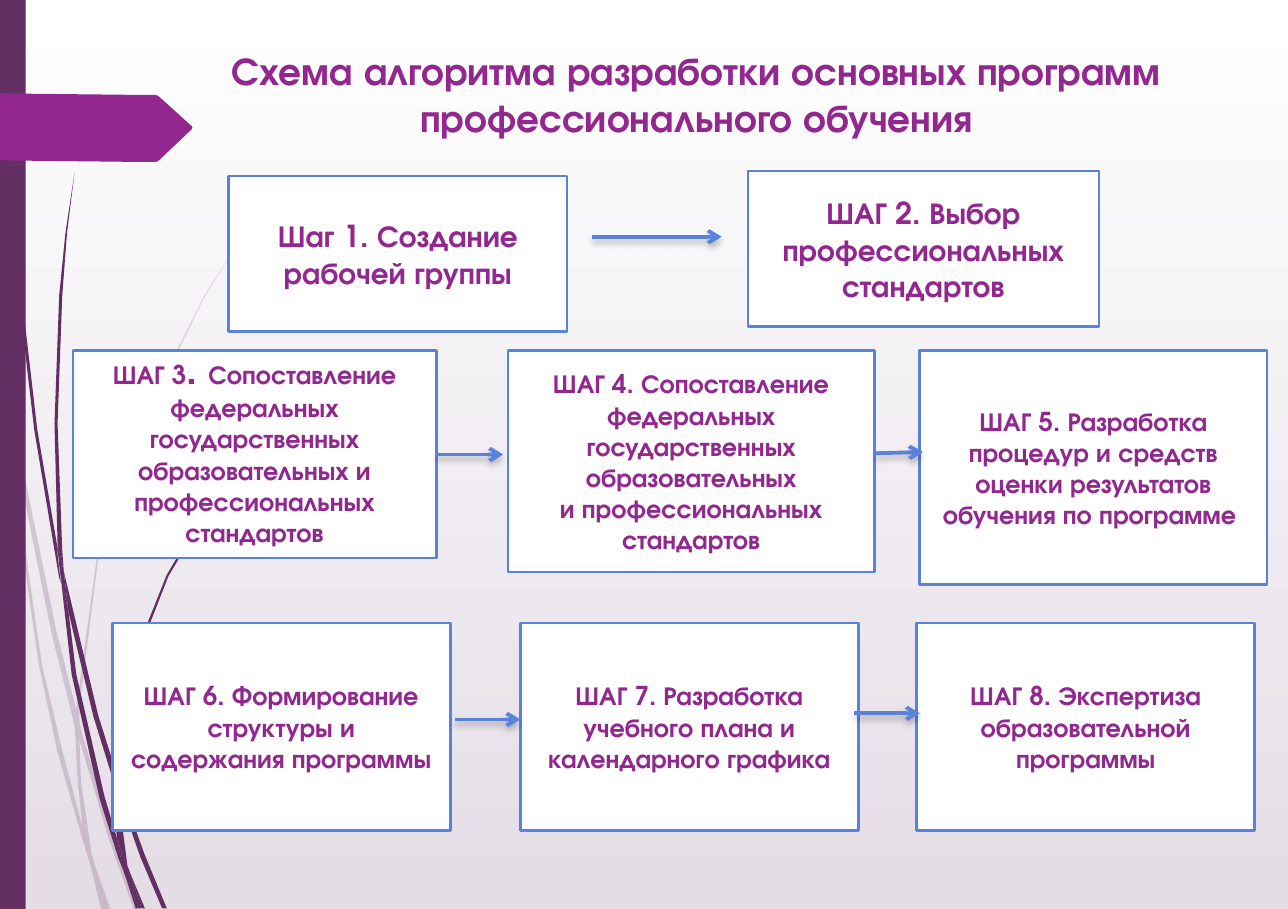
from dataclasses import dataclass

from lxml.etree import SubElement
from pptx import Presentation
from pptx.dml.color import RGBColor
from pptx.enum.shapes import MSO_CONNECTOR, MSO_SHAPE
from pptx.enum.text import MSO_ANCHOR, MSO_AUTO_SIZE, PP_ALIGN
from pptx.oxml.ns import qn
from pptx.util import Cm, Pt


@dataclass(frozen=True)
class Theme:
    font: str = "TeX Gyre Adventor"
    accent: str = "92278F"
    dark: str = "632E62"
    outline: str = "5982DB"
    white: str = "FFFFFF"
    bg_end: str = "E4DDE6"
    title: int = 18
    large: int = 14
    body: int = 12


T = Theme()

# Content: each step is a list of paragraphs, each paragraph a list of (text, size)
TITLE = "Схема алгоритма разработки основных программ профессионального обучения"
STEPS = [
    [[("Шаг 1. Создание рабочей группы", T.large)]],
    [[("ШАГ 2. Выбор профессиональных стандартов", T.large)]],
    [[("ШАГ 3", T.body), (". ", T.title),
      ("Сопоставление федеральных государственных образовательных и "
       "профессиональных стандартов", T.body)]],
    [[("ШАГ 4. Сопоставление федеральных государственных образовательных", T.body)],
     [("и профессиональных стандартов", T.body)]],
    [[("ШАГ 5. Разработка процедур и средств оценки результатов обучения по программе ", T.body)]],
    [[("ШАГ 6. Формирование структуры и содержания программы", T.body)]],
    [[("ШАГ 7. Разработка учебного плана и календарного графика", T.body)]],
    [[("ШАГ 8. Экспертиза образовательной программы", T.body)]],
]

# Step boxes in cm: left, top, width, height
BOXES = [
    (3.73, 2.87, 5.51, 2.54), (12.19, 2.79, 5.72, 2.54),
    (1.19, 5.72, 5.92, 3.38), (8.28, 5.72, 5.97, 3.61), (14.99, 5.72, 5.66, 3.81),
    (1.83, 10.16, 5.51, 3.38), (8.48, 10.16, 5.51, 3.38), (14.94, 10.16, 5.51, 3.38),
]
# Arrows in cm: x1, y1, x2, y2, index of the box joined at the start
ARROWS = [
    (9.65, 3.86, 11.76, 3.86, None), (7.11, 7.41, 8.2, 7.41, 2),
    (14.25, 7.39, 15.04, 7.37, None), (7.42, 11.73, 8.48, 11.73, None),
    (13.92, 11.63, 14.99, 11.63, None),
]

# Decorative strands, in grid units: outline points of every piece
UNIT = Cm(0.0254)
PALE_STRANDS = [
    [(6, 272), (5, 250), (0, 219), (0, 233), (6, 268)],
    [(33, 406), (48, 466), (49, 456), (36, 404), (8, 268), (10, 292)],
    [(53, 472), (51, 463), (51, 475), (70, 539), (86, 584), (89, 584), (73, 538)],
    [(68, 584), (71, 584), (60, 553)],
    [(53, 531), (40, 482), (27, 427), (18, 365), (10, 292), (6, 272), (16, 365),
     (25, 427), (37, 483), (53, 539), (58, 555), (57, 550)],
    [(5, 246), (5, 250), (8, 267), (8, 268), (6, 245), (3, 125), (6, 19), (5, 19), (2, 125)],
    [(48, 466), (50, 503), (53, 531), (55, 538), (60, 553), (59, 549), (52, 502),
     (51, 475), (50, 473)],
    [(51, 454), (63, 359), (92, 271), (131, 191), (154, 154), (166, 136), (179, 119),
     (166, 136), (154, 154), (131, 190), (91, 270), (62, 359), (49, 454), (49, 456), (51, 463)],
    [(58, 555), (65, 584), (68, 584)],
    [(50, 473), (51, 475), (51, 463), (49, 456), (48, 466)],
    [(55, 538), (53, 531), (57, 550), (58, 555), (68, 584), (60, 553)],
]
DARK_STRANDS = [
    [(4, 86), (11, 181), (22, 276), (38, 371), (39, 374), (37, 356), (37, 352), (24, 276),
     (13, 181), (5, 85), (3, 37), (2, 0), (2, 37)],
    [(60, 460), (73, 502), (73, 493), (73, 491), (63, 459), (41, 367), (44, 393)],
    [(77, 505), (75, 499), (76, 510), (90, 550), (104, 583), (107, 583), (93, 549)],
    [(75, 538), (67, 511), (49, 433), (44, 393), (39, 371), (46, 433), (64, 513),
     (76, 551), (80, 561), (79, 558)],
    [(41, 367), (40, 353), (37, 272), (40, 190), (43, 150), (48, 110), (42, 150),
     (38, 190), (35, 272), (37, 349)],
    [(91, 583), (93, 583), (83, 559)],
    [(39, 371), (44, 393), (41, 367), (37, 349), (37, 353)],
    [(76, 493), (85, 429), (108, 370), (140, 316), (158, 291), (168, 279), (178, 268),
     (168, 279), (158, 290), (139, 315), (107, 369), (83, 429), (73, 491), (75, 499)],
    [(80, 561), (87, 583), (89, 583)],
    [(73, 502), (75, 538), (79, 549), (83, 559), (82, 557), (76, 511), (74, 506)],
    [(73, 502), (74, 506), (76, 510), (75, 499), (73, 491), (73, 493)],
    [(79, 549), (75, 538), (79, 558), (80, 561), (89, 583), (91, 583), (83, 559)],
]
RIBBON = [(123, 83), (102, 103), (100, 104), (92, 104), (0, 103), (0, 60), (92, 61),
          (100, 61), (102, 62), (123, 81), (123.5, 82)]


def rgb(color):
    return RGBColor.from_string(color)


def paint(sp, fill, line=None):
    sp.shadow.inherit = False
    sp.fill.solid()
    sp.fill.fore_color.rgb = rgb(fill)
    if line:
        sp.line.color.rgb = rgb(line)
        sp.line.width = Pt(1.25)
    else:
        sp.line.fill.background()


def add_outline(shapes, points, color, alpha=None):
    pts = [(x * UNIT, y * UNIT) for x, y in points]
    fb = shapes.build_freeform(*pts[0])
    fb.add_line_segments(pts[1:], close=True)
    sp = fb.convert_to_shape()
    paint(sp, color)
    if alpha:
        clr = sp.fill._xPr.find(qn("a:solidFill"))[0]
        SubElement(clr, qn("a:alpha"), val=str(alpha * 1000))


def write(tf, paragraphs):
    tf.word_wrap = True
    for i, runs in enumerate(paragraphs):
        p = tf.paragraphs[0] if i == 0 else tf.add_paragraph()
        p.alignment = PP_ALIGN.CENTER
        for text, size in runs:
            r = p.add_run()
            r.text = text
            r.font.name, r.font.size, r.font.bold = T.font, Pt(size), True
            r.font.color.rgb = rgb(T.accent)


def add_box(shapes, box, paragraphs):
    sp = shapes.add_shape(MSO_SHAPE.RECTANGLE, *map(Cm, box))
    paint(sp, T.white, T.outline)
    sp.text_frame.vertical_anchor = MSO_ANCHOR.MIDDLE
    write(sp.text_frame, paragraphs)
    return sp


def add_arrow(shapes, ends, start_box):
    cn = shapes.add_connector(MSO_CONNECTOR.STRAIGHT, *map(Cm, ends))
    if start_box is not None:
        cn.begin_connect(start_box, 3)
    cn.line.color.rgb = rgb(T.outline)
    cn.line.width = Pt(1.75)
    SubElement(cn.line._get_or_add_ln(), qn("a:tailEnd"), type="arrow")
    effects = SubElement(cn._element.spPr, qn("a:effectLst"))
    shadow = SubElement(effects, qn("a:outerShdw"), blurRad=str(Pt(3)), dist=str(Pt(2)),
                        dir="5400000", rotWithShape="0")
    clr = SubElement(shadow, qn("a:srgbClr"), val="000000")
    SubElement(clr, qn("a:alpha"), val="25000")


def main():
    prs = Presentation()
    prs.slide_width, prs.slide_height = Cm(20.99), Cm(14.82)
    slide = prs.slides.add_slide(prs.slide_layouts[5])
    shapes = slide.shapes

    # Background
    fill = slide.background.fill
    fill.gradient()
    fill.gradient_angle = 270
    for stop, color, pos in zip(fill.gradient_stops, (T.white, T.bg_end), (0, 1)):
        stop.color.rgb = rgb(color)
        stop.position = pos

    # Strands, side bar and ribbon
    for strands, alpha in ((PALE_STRANDS, 20), (DARK_STRANDS, None)):
        group = shapes.add_group_shape()
        for points in strands:
            add_outline(group.shapes, points, T.dark, alpha)
    bar = shapes.add_shape(MSO_SHAPE.RECTANGLE, 0, 0, Cm(0.42), prs.slide_height)
    paint(bar, T.dark)
    add_outline(shapes, RIBBON, T.accent)

    # Title
    title = shapes.title
    title.left, title.top, title.width, title.height = map(Cm, (3.1, 0.63, 16.51, 1.8))
    title.text_frame.auto_size = MSO_AUTO_SIZE.NONE
    title.text_frame.vertical_anchor = MSO_ANCHOR.TOP
    write(title.text_frame, [[(TITLE, T.title)]])

    # Steps and arrows
    boxes = [add_box(shapes, box, step) for box, step in zip(BOXES, STEPS)]
    boxes[2].text_frame.margin_bottom = Cm(0.39)
    for *ends, start in ARROWS:
        add_arrow(shapes, ends, None if start is None else boxes[start])

    prs.save("out.pptx")


if __name__ == "__main__":
    main()
